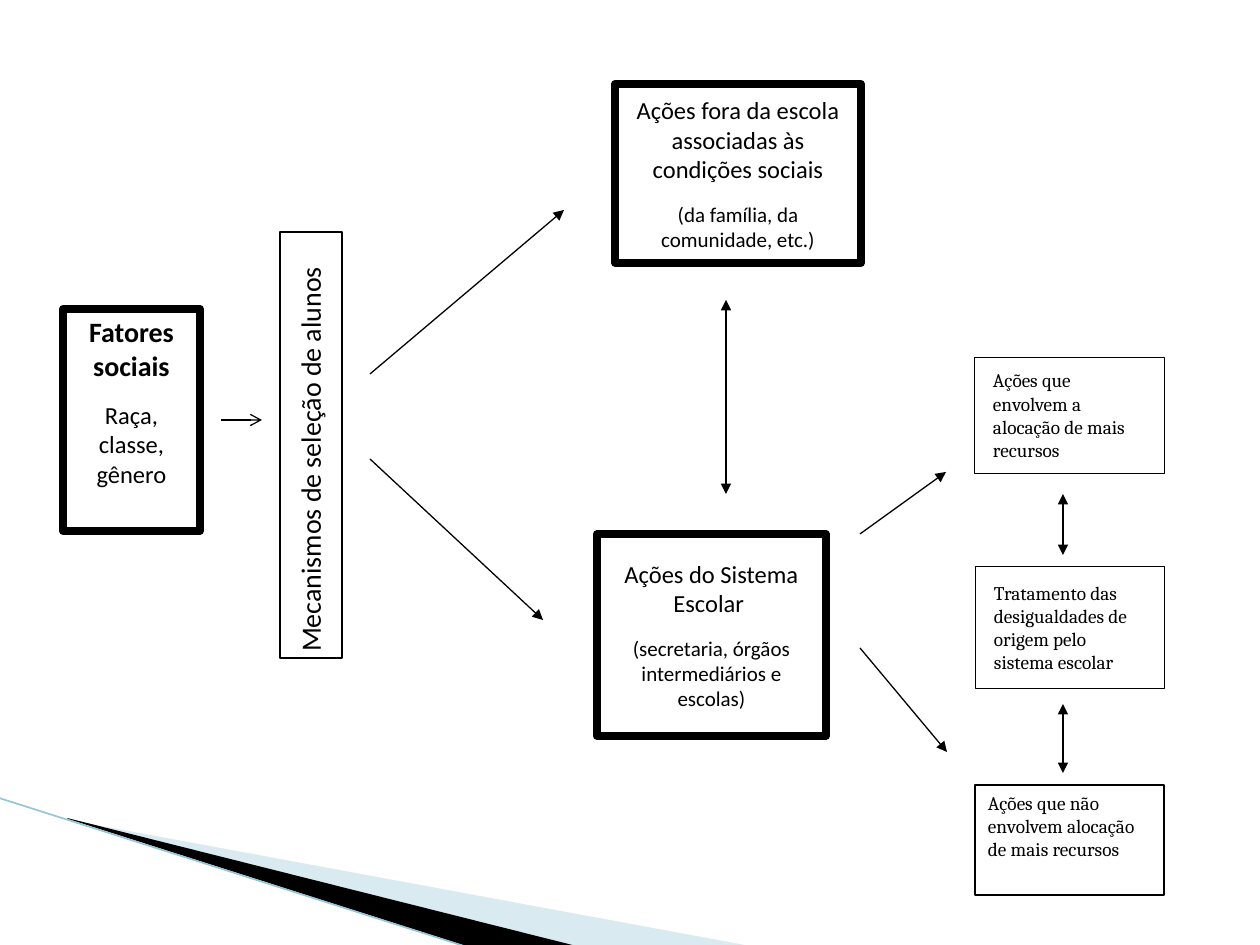
from lxml.etree import SubElement
from pptx import Presentation
from pptx.dml.color import RGBColor
from pptx.enum.shapes import MSO_CONNECTOR, MSO_SHAPE
from pptx.enum.text import MSO_ANCHOR, PP_ALIGN
from pptx.oxml.ns import qn
from pptx.util import Pt

PX = 914400 / 126
HUES = {"ink": "000000", "paper": "FFFFFF", "pale": "A0CBDC", "edge": "97C5D8"}


def emu(px):
    return round(px * PX)


def hue(name):
    return RGBColor.from_string(HUES[name])


def paint(fill, name):
    fill.solid()
    fill.fore_color.rgb = hue(name)


def wedge(slide, points, name, alpha=None):
    form = slide.shapes.build_freeform(*points[0], scale=PX)
    form.add_line_segments(points[1:], close=True)
    shape = form.convert_to_shape()
    shape.shadow.inherit = False
    paint(shape.fill, name)
    shape.line.fill.background()
    if alpha:
        tint = shape.fill._xPr.find(".//" + qn("a:srgbClr"))
        SubElement(tint, qn("a:alpha"), val=str(alpha * 1000))


def link(slide, start, end, tail=None, head=None, name="ink", width=0.75):
    ends = [emu(n) for n in (*start, *end)]
    line = slide.shapes.add_connector(MSO_CONNECTOR.STRAIGHT, *ends)
    paint(line.line.fill, name)
    line.line.width = Pt(width)
    props = line.line._get_or_add_ln()
    for tag, kind in (("a:headEnd", head), ("a:tailEnd", tail)):
        if kind:
            SubElement(props, qn(tag), type=kind)
    SubElement(line._element.spPr, qn("a:effectLst"))


def box(slide, place, width, filled=True, pad=(13, 6), anchor=MSO_ANCHOR.TOP):
    shape = slide.shapes.add_shape(MSO_SHAPE.RECTANGLE, *map(emu, place))
    shape.shadow.inherit = False
    if filled:
        paint(shape.fill, "paper")
    else:
        shape.fill.background()
    paint(shape.line.fill, "ink")
    shape.line.width = Pt(width)
    frame = shape.text_frame
    frame.word_wrap = True
    frame.vertical_anchor = anchor
    frame.margin_left = frame.margin_right = emu(pad[0])
    frame.margin_top = frame.margin_bottom = emu(pad[1])
    return frame


def write(frame, lines, face="Calibri", align=PP_ALIGN.CENTER, after=10):
    for i, (text, size, bold) in enumerate(lines):
        para = frame.paragraphs[0] if i == 0 else frame.add_paragraph()
        para.alignment = align
        para.space_after = Pt(after)
        run = para.add_run()
        run.text = text
        font = run.font
        font.name, font.size, font.bold = face, Pt(size), bold
        font.color.rgb = hue("ink")


def note(slide, place, text, **look):
    frame = box(slide, place, **look)
    write(frame, [(text, 11, False)], "Cambria", PP_ALIGN.LEFT, 0)


def main():
    deck = Presentation()
    deck.slide_width, deck.slide_height = emu(1260), emu(945)
    slide = deck.slides.add_slide(deck.slide_layouts[6])
    paint(slide.background.fill, "paper")

    wedge(slide, [(69, 820), (750, 946), (575, 946), (69, 819)], "pale", 40)
    wedge(slide, [(67, 818), (576, 946), (469, 947), (68, 819)], "ink")
    link(slide, (-1, 798), (467, 947), name="edge", width=0.95)

    mid = MSO_ANCHOR.MIDDLE
    write(box(slide, (63, 309, 137, 222), 4.5),
          [("Fatores sociais", 16, True), ("Raça, classe, gênero", 14, False)])
    side = box(slide, (280, 232, 62, 426), 0.75)
    side._txBody.bodyPr.set("vert", "vert270")
    write(side, [("Mecanismos de seleção de alunos", 16, False)],
          align=PP_ALIGN.LEFT)
    write(box(slide, (615, 84, 246, 179), 4.5, anchor=mid),
          [("Ações fora da escola associadas às condições sociais", 14, False),
           ("(da família, da comunidade, etc.)", 12, False)])
    write(box(slide, (597, 534, 229, 202), 4.5, False, (13, 13), mid),
          [("Ações do Sistema Escolar ", 14, False),
           ("(secretaria, órgãos intermediários e escolas)", 12, False)])

    look = dict(width=0.25, filled=False, pad=(19, 13), anchor=mid)
    note(slide, (974, 357, 190, 116),
         "Ações que envolvem a alocação de mais recursos", **look)
    note(slide, (975, 566, 189, 122),
         "Tratamento das desigualdades de origem pelo sistema escolar", **look)
    note(slide, (975, 785, 189, 110),
         "Ações que não envolvem alocação de mais recursos", width=0.75)

    tip = "triangle"
    link(slide, (221, 420), (262, 420), "arrow")
    for start, end in (((370, 374), (564, 210)), ((370, 459), (543, 620)),
                       ((860, 534), (946, 472)), ((860, 648), (947, 752))):
        link(slide, start, end, tip)
    for x, top, foot in ((726, 300, 494), (1063, 494, 555), (1063, 704, 773)):
        link(slide, (x, top), (x, foot), tip, tip)

    deck.save("out.pptx")


if __name__ == "__main__":
    main()
